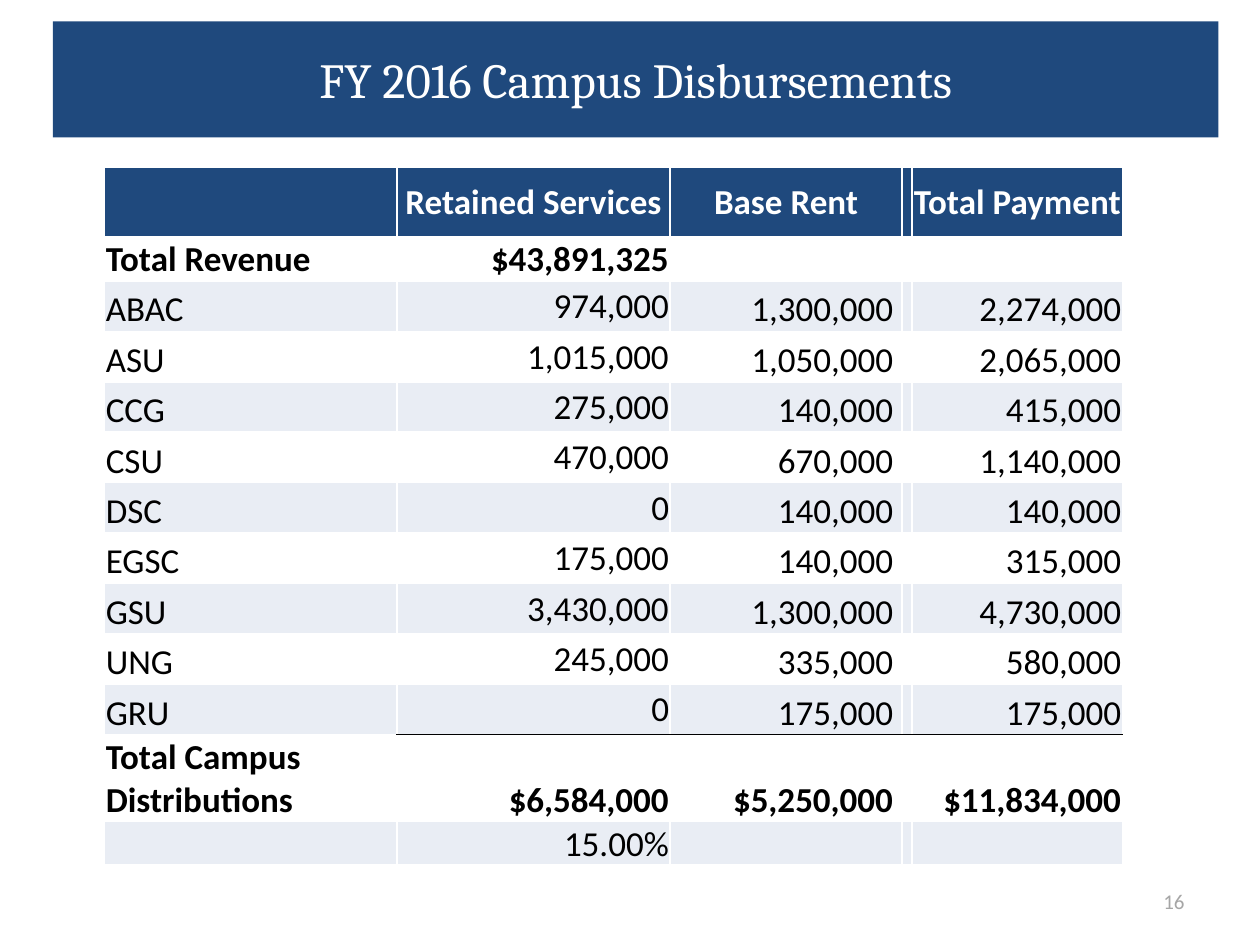
from dataclasses import dataclass

from lxml import etree
from pptx import Presentation
from pptx.dml.color import RGBColor
from pptx.enum.text import MSO_ANCHOR, PP_ALIGN
from pptx.oxml.ns import qn
from pptx.util import Inches, Pt

LEFT, CENTER, RIGHT = PP_ALIGN.LEFT, PP_ALIGN.CENTER, PP_ALIGN.RIGHT
MIDDLE, BOTTOM = MSO_ANCHOR.MIDDLE, MSO_ANCHOR.BOTTOM


@dataclass(frozen=True)
class Theme:
    navy: str = "1F497D"
    band: str = "E9EDF4"
    white: str = "FFFFFF"
    black: str = "000000"
    gray: str = "A6A6A6"
    heading_font: str = "Cambria"
    body_font: str = "Calibri"
    title_size: int = 28
    table_size: int = 20
    number_size: int = 12


HEADER = ["", "Retained Services", "Base Rent", "", "Total Payment"]
CAMPUSES = [
    ("ABAC", "974,000", "1,300,000", "2,274,000"),
    ("ASU", "1,015,000", "1,050,000", "2,065,000"),
    ("CCG", "275,000", "140,000", "415,000"),
    ("CSU", "470,000", "670,000", "1,140,000"),
    ("DSC", "0", "140,000", "140,000"),
    ("EGSC", "175,000", "140,000", "315,000"),
    ("GSU", "3,430,000", "1,300,000", "4,730,000"),
    ("UNG", "245,000", "335,000", "580,000"),
    ("GRU", "0", "175,000", "175,000"),
]
ROWS = [
    HEADER,
    ["Total Revenue", "$43,891,325", "", "", ""],
    *[[name, retained, rent, "", total] for name, retained, rent, total in CAMPUSES],
    ["Total Campus Distributions", "$6,584,000", "$5,250,000", "", "$11,834,000"],
    ["", "15.00%", "", "", ""],
]
COLUMN_WIDTHS = [2.32, 2.17, 1.84, 0.08, 1.67]
ROW_HEIGHTS = [0.55, 0.35] + [0.4] * len(CAMPUSES) + [0.69, 0.34]
TOTAL_ROW = len(ROWS) - 2
BOLD_ROWS = {0, 1, TOTAL_ROW}
RENT_COLUMN = 2


def write(frame, text, *, font, size, color, align=LEFT, bold=False):
    para = frame.paragraphs[0]
    para.alignment = align
    span = para.add_run()
    span.text = text
    span.font.name = font
    span.font.size = Pt(size)
    span.font.bold = bold
    span.font.color.rgb = RGBColor.from_string(color)


class SlideBuilder:
    def __init__(self, page, theme):
        self.page = page
        self.theme = theme

    def place(self, box, left, top, width, height):
        box.left, box.top = Inches(left), Inches(top)
        box.width, box.height = Inches(width), Inches(height)

    def title(self, text, *area):
        box = self.page.shapes.title
        self.place(box, *area)
        box.fill.solid()
        box.fill.fore_color.rgb = RGBColor.from_string(self.theme.navy)
        box.text_frame.vertical_anchor = MIDDLE
        write(box.text_frame, text, font=self.theme.heading_font,
              size=self.theme.title_size, color=self.theme.white, align=CENTER)

    def page_number(self, text, *area):
        box = self.page.shapes.add_textbox(*map(Inches, area))
        box.text_frame.word_wrap = True
        box.text_frame.vertical_anchor = MIDDLE
        write(box.text_frame, text, font=self.theme.body_font,
              size=self.theme.number_size, color=self.theme.gray, align=RIGHT)

    def table(self, rows, left, top):
        area = (left, top, sum(COLUMN_WIDTHS), sum(ROW_HEIGHTS))
        grid = self.page.shapes.add_table(
            len(rows), len(COLUMN_WIDTHS), *map(Inches, area)).table
        for column, width in zip(grid.columns, COLUMN_WIDTHS):
            column.width = Inches(width)
        for row, height in zip(grid.rows, ROW_HEIGHTS):
            row.height = Inches(height)
        for row_index, texts in enumerate(rows):
            for column_index, text in enumerate(texts):
                self.cell(grid.cell(row_index, column_index), text, row_index, column_index)

    def cell(self, cell, text, row, column):
        theme = self.theme
        is_header = row == 0
        is_value = row > 0 and column == RENT_COLUMN
        cell.margin_left = cell.margin_top = Inches(0.01)
        cell.margin_right = Inches(0.07 if is_value else 0.01)
        cell.margin_bottom = 0
        is_middle = is_header or (column == 1 and row != TOTAL_ROW)
        cell.vertical_anchor = MIDDLE if is_middle else BOTTOM
        self.borders(cell, row, column)
        if is_header or row % 2 == 0:
            cell.fill.solid()
            cell.fill.fore_color.rgb = RGBColor.from_string(
                theme.navy if is_header else theme.band)
        else:
            cell.fill.background()
        if text:
            align = CENTER if is_header else RIGHT if column else LEFT
            write(cell.text_frame, text, font=theme.body_font, size=theme.table_size,
                  color=theme.white if is_header else theme.black,
                  align=align, bold=row in BOLD_ROWS)

    def borders(self, cell, row, column):
        properties = cell._tc.get_or_add_tcPr()
        ruled = {TOTAL_ROW - 1: "lnB", TOTAL_ROW: "lnT"}.get(row) if column else None
        for side in ("lnL", "lnR", "lnT", "lnB"):
            line = etree.SubElement(properties, qn(f"a:{side}"), w=str(Pt(1)))
            fill = etree.SubElement(line, qn("a:solidFill"))
            color = self.theme.black if side == ruled else self.theme.white
            etree.SubElement(fill, qn("a:srgbClr"), val=color)


def main():
    deck = Presentation()
    deck.slide_width, deck.slide_height = Inches(10), Inches(7.5)
    page = deck.slides.add_slide(deck.slide_layouts[5])
    builder = SlideBuilder(page, Theme())
    builder.title("FY 2016 Campus Disbursements", 0.42, 0.17, 9.25, 0.92)
    builder.page_number("16", 7.17, 6.95, 2.33, 0.4)
    builder.table(ROWS, 0.83, 1.33)
    deck.save("out.pptx")


if __name__ == "__main__":
    main()
